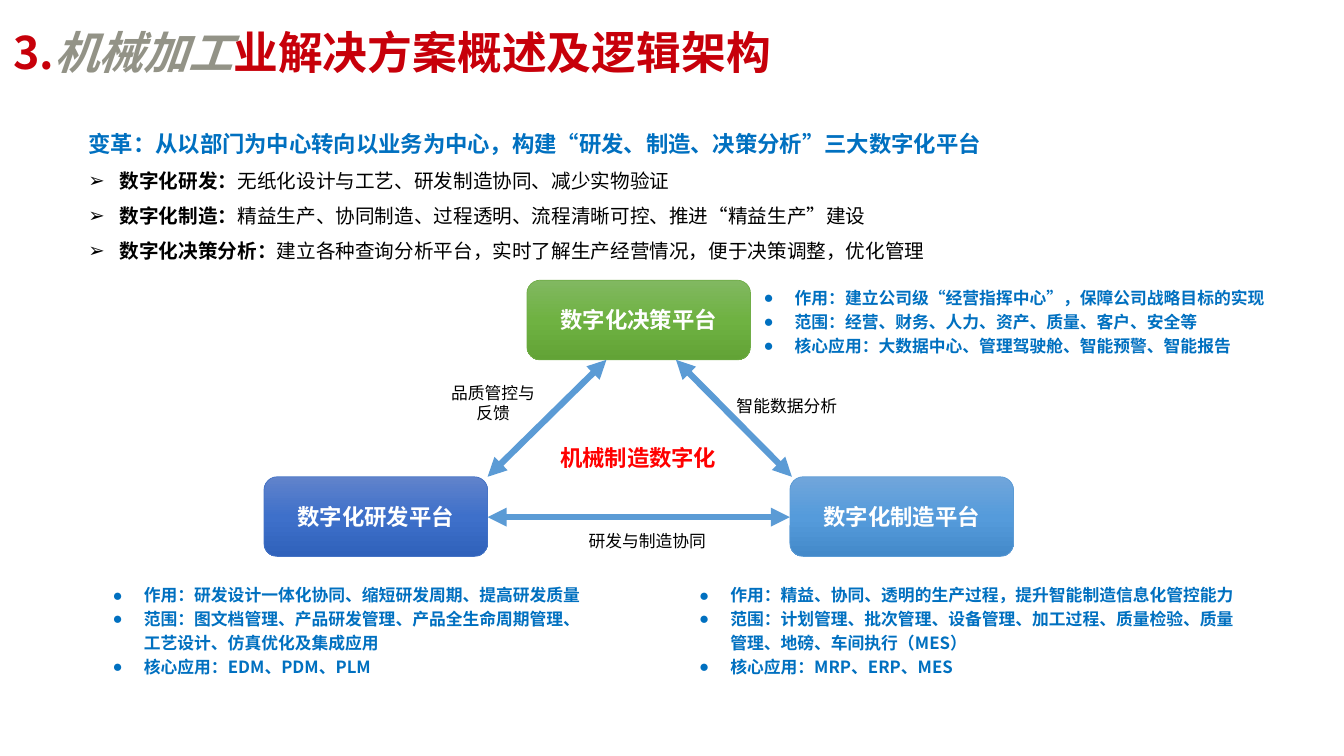
from copy import deepcopy

from lxml import etree
from pptx import Presentation
from pptx.dml.color import RGBColor
from pptx.enum import shapes, text
from pptx.oxml import ns
from pptx.util import Inches, Pt

FONT = "Noto Sans CJK SC"
BLUE = "0070C0"
ARROW = "5B9BD5"
INDENT = 0.31


def rgb(value):
    return RGBColor.from_string(value)


def write(shape, lines, size, color, bold=False, align=None, spacing=None, bullets=None):
    """Fill a shape; each line is a list of runs, bullets gives one mark per line."""
    frame = shape.text_frame
    frame.word_wrap = True
    for i, runs in enumerate(lines):
        para = frame.paragraphs[0] if i == 0 else frame.add_paragraph()
        para.alignment = align
        para.line_spacing = spacing
        if bullets and bullets[i]:
            props = para._p.get_or_add_pPr()
            props.set("marL", str(Inches(INDENT)))
            props.set("indent", str(-Inches(INDENT)))
            etree.SubElement(props, ns.qn("a:buFont")).set("typeface", "Arial")
            etree.SubElement(props, ns.qn("a:buChar")).set("char", bullets[i])
        for words in runs:
            run = para.add_run()
            run.text = words
            run.font.size = Pt(size)
            run.font.bold = bold
            run.font.color.rgb = rgb(color)
            run.font.name = FONT
            etree.SubElement(run._r.rPr, ns.qn("a:ea")).set("typeface", FONT)
    return frame


deck = Presentation()
deck.slide_width, deck.slide_height = Inches(13.34), Inches(7.5)
slide = deck.slides.add_slide(deck.slide_layouts[6])
center = text.PP_ALIGN.CENTER
middle = text.MSO_ANCHOR.MIDDLE

# Title
title = slide.shapes.add_textbox(Inches(0.13), Inches(0.3), Inches(12.04), Inches(0.59))
frame = write(title, [["3.", "机械加工", "业解决方案概述及逻辑架构"]], 32, "C7000A", True,
              spacing=Pt(34.3))
frame.margin_left = frame.margin_right = frame.margin_top = frame.margin_bottom = 0
industry = frame.paragraphs[0].runs[1].font
industry.italic = True
industry.color.rgb = rgb("939387")

# Transformation summary
summary = slide.shapes.add_textbox(Inches(0.78), Inches(1.11), Inches(12.12), Inches(1.57))
frame = write(summary, [
    ["变革：从以部门为中心转向以业务为中心，构建“研发、制造、决策分析”三大数字化平台"],
    ["数字化研发：", "无纸化设计与工艺、研发制造协同、减少实物验证"],
    ["数字化制造：", "精益生产、协同制造、过程透明、流程清晰可控、推进“精益生产”建设"],
    ["数字化决策分析：", "建立各种查询分析平台，实时了解生产经营情况，便于决策调整，优化管理"],
], 14, "000000", True, spacing=1.5, bullets=[None, "➢", "➢", "➢"])
headline = frame.paragraphs[0].runs[0].font
headline.size = Pt(16)
headline.color.rgb = rgb(BLUE)
for para in frame.paragraphs[1:]:
    para.runs[1].font.bold = False

# Three platforms
for name, left, top, border, gradient in [
    ("数字化决策平台", 5.23, 2.78, "70AD47", ("81B861", "6FB242", "62A336")),
    ("数字化制造平台", 7.84, 4.73, "5B9BD5", ("71A6DB", "559BDB", "448ACA")),
    ("数字化研发平台", 2.62, 4.73, "4472C4", ("6183CB", "3E70CA", "3062BB")),
]:
    platform = slide.shapes.add_shape(shapes.MSO_SHAPE.ROUNDED_RECTANGLE, Inches(left),
                                      Inches(top), Inches(2.22), Inches(0.79))
    platform.shadow.inherit = False
    platform.line.color.rgb = rgb(border)
    platform.line.width = Pt(0.5)
    platform.fill.gradient()
    platform.fill.gradient_angle = 270
    stops = platform._element.spPr.find(".//" + ns.qn("a:gsLst"))
    stops.append(deepcopy(stops[-1]))
    for i, (stop, color) in enumerate(zip(platform.fill.gradient_stops, gradient)):
        stop.position = i / 2
        stop.color.rgb = rgb(color)
    write(platform, [[name]], 16, "FFFFFF", True, center).vertical_anchor = middle

# Theme in the middle of the triangle
theme = slide.shapes.add_textbox(Inches(5.19), Inches(4.36), Inches(2.29), Inches(0.37))
write(theme, [["机械制造数字化"]], 16, "FF0000", True, center)

# Two-way arrows between the platforms
for x1, y1, x2, y2 in [(6.02, 3.57, 4.84, 4.73), (6.71, 3.57, 7.86, 4.73),
                       (7.84, 5.13, 4.84, 5.13)]:
    link = slide.shapes.add_connector(shapes.MSO_CONNECTOR.STRAIGHT, Inches(x1), Inches(y1),
                                      Inches(x2), Inches(y2))
    link.line.color.rgb = rgb(ARROW)
    link.line.width = Pt(4.5)
    for end in ("a:headEnd", "a:tailEnd"):
        etree.SubElement(link.line._get_or_add_ln(), ns.qn(end)).set("type", "triangle")
    etree.SubElement(link._element.spPr, ns.qn("a:effectLst"))

# Arrow labels
for label, left, top, width, height in [
    ("研发与制造协同", 5.74, 5.22, 1.37, 0.3),
    ("品质管控与反馈", 4.31, 3.87, 1.17, 0.27),
    ("智能数据分析", 7.2, 3.87, 1.22, 0.33),
]:
    caption = slide.shapes.add_textbox(Inches(left), Inches(top), Inches(width), Inches(height))
    write(caption, [[label]], 12, "000000", align=center, spacing=0.97).vertical_anchor = middle

# Role, scope and core applications of each platform
for left, top, width, height, role, scope, core in [
    (1.02, 5.72, 4.91, 1.05,
     "研发设计一体化协同、缩短研发周期、提高研发质量",
     "图文档管理、产品研发管理、产品全生命周期管理、工艺设计、仿真优化及集成应用",
     "EDM、PDM、PLM"),
    (6.84, 5.72, 5.55, 1.05,
     "精益、协同、透明的生产过程，提升智能制造信息化管控能力",
     "计划管理、批次管理、设备管理、加工过程、质量检验、质量管理、地磅、车间执行（MES）",
     "MRP、ERP、MES"),
    (7.48, 2.77, 5.19, 0.82,
     "建立公司级“经营指挥中心”，保障公司战略目标的实现",
     "经营、财务、人力、资产、质量、客户、安全等",
     "大数据中心、管理驾驶舱、智能预警、智能报告"),
]:
    details = slide.shapes.add_textbox(Inches(left), Inches(top), Inches(width), Inches(height))
    write(details, [["作用：" + role], ["范围：" + scope], ["核心应用：" + core]], 12, BLUE, True,
          spacing=Pt(17), bullets="●●●")

deck.save("out.pptx")
